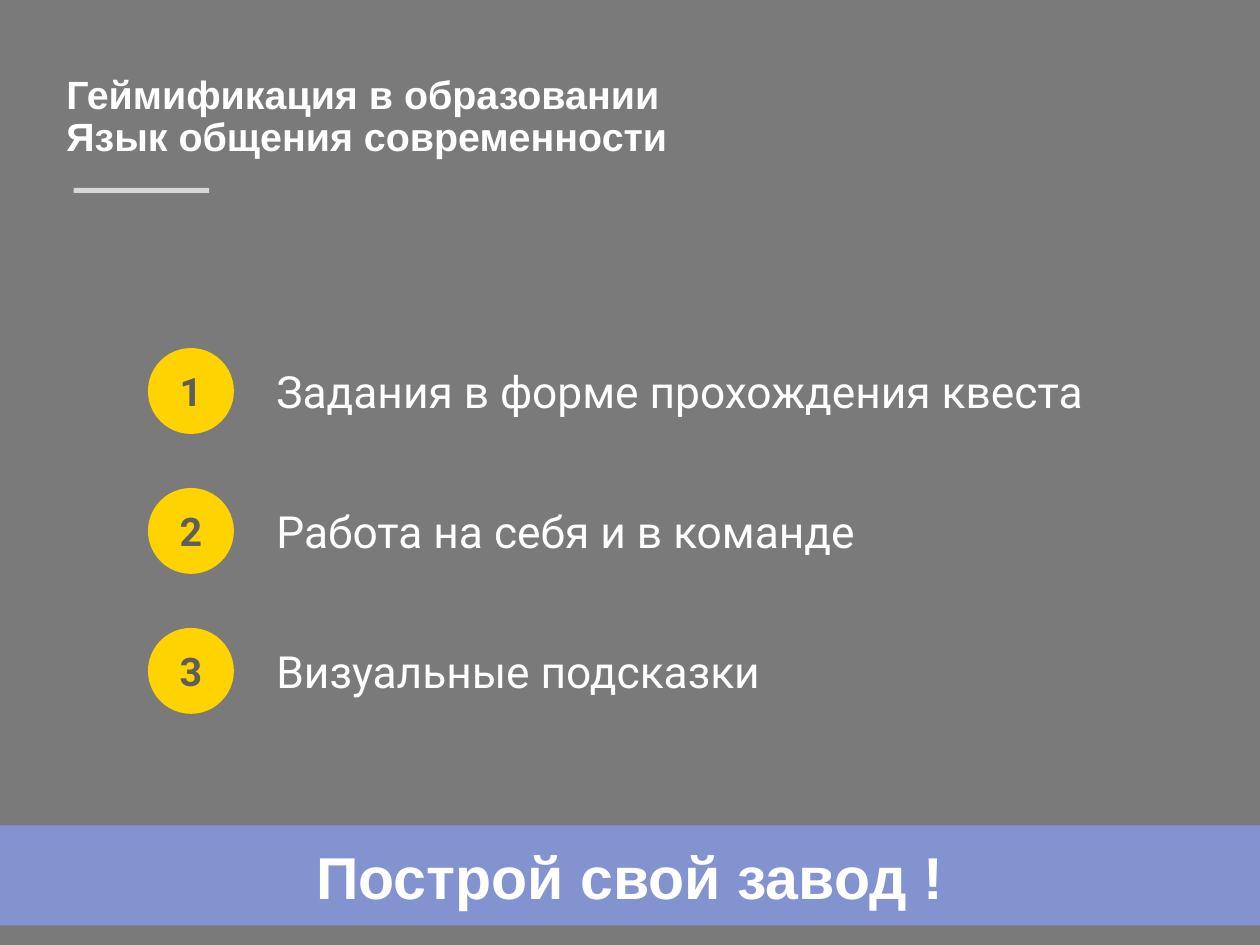
from lxml.etree import SubElement
from pptx import Presentation
from pptx.dml.color import RGBColor
from pptx.enum.shapes import MSO_CONNECTOR, MSO_SHAPE
from pptx.enum.text import MSO_ANCHOR, MSO_AUTO_SIZE, PP_ALIGN
from pptx.oxml.ns import qn
from pptx.util import Inches, Pt

COLORS = {
    "veil": "424242",
    "band": "8393CF",
    "white": "FFFFFF",
    "disc": "FFD300",
    "digit": "5E5E5E",
}


def add_block(kind, left, top, width, height, color):
    block = slide.shapes.add_shape(
        kind, Inches(left), Inches(top), Inches(width), Inches(height))
    block.shadow.inherit = False
    block.fill.solid()
    block.fill.fore_color.rgb = RGBColor.from_string(COLORS[color])
    block.line.fill.background()
    return block


def write(shape, text, size, font, color, bold=False,
          align=PP_ALIGN.LEFT, anchor=MSO_ANCHOR.MIDDLE):
    frame = shape.text_frame
    frame.word_wrap = True
    frame.auto_size = MSO_AUTO_SIZE.NONE
    frame.vertical_anchor = anchor
    frame.margin_left = frame.margin_right = Inches(0.06)
    frame.margin_top = frame.margin_bottom = Inches(0.06)
    para = frame.paragraphs[0]
    para.text = text
    para.alignment = align
    for run in para.runs:
        run.font.size = Pt(size)
        run.font.name = font
        run.font.bold = bold
        run.font.color.rgb = RGBColor.from_string(COLORS[color])
    return para


deck = Presentation()
deck.slide_width = Inches(14.22)
deck.slide_height = Inches(10.67)
slide = deck.slides.add_slide(deck.slide_layouts[5])

# Translucent grey backdrop
veil = add_block(MSO_SHAPE.RECTANGLE, 0, 0, 14.22, 10.67, "veil")
tint = veil.fill._xPr.find(".//" + qn("a:srgbClr"))
SubElement(tint, qn("a:alpha"), val="70000")

# Slogan band
band = add_block(MSO_SHAPE.RECTANGLE, 0, 9.32, 14.22, 1.13, "band")
write(band, "Построй свой завод !", 48, "Arial", "white", True, PP_ALIGN.CENTER)

# Title, moved in front of the backdrop
title = slide.shapes.title
title.left, title.top = Inches(0.69), Inches(0.76)
title.width, title.height = Inches(9.72), Inches(1.11)
head = write(title, "Геймификация в образовании\nЯзык общения современности",
             32, "Arial", "white", True, anchor=MSO_ANCHOR.BOTTOM)
head.line_spacing = 0.9
SubElement(head._p.find(qn("a:br")), qn("a:rPr"), sz="3200")
band._element.addnext(title._element)

# Rule under the title
rule = slide.shapes.add_connector(
    MSO_CONNECTOR.STRAIGHT, Inches(0.83), Inches(2.15), Inches(2.36), Inches(2.15))
rule.line.width = Pt(4)
rule.line.color.rgb = RGBColor.from_string(COLORS["white"])
tint = rule.line._ln.find(".//" + qn("a:srgbClr"))
SubElement(tint, qn("a:alpha"), val="70000")
SubElement(rule._element.spPr, qn("a:effectLst"))

# Numbered points
points = [
    "Задания в форме прохождения квеста",
    "Работа на себя и в команде",
    "Визуальные подсказки",
]
for num, point in enumerate(points):
    top = 3.93 + num * 1.58
    disc = add_block(MSO_SHAPE.OVAL, 1.67, top, 0.97, 0.97, "disc")
    write(disc, str(num + 1), 32, "Roboto", "digit", True, PP_ALIGN.CENTER)
    label = slide.shapes.add_textbox(
        Inches(3.06), Inches(top - 0.11), Inches(11.16), Inches(1.18))
    write(label, point, 36, "Roboto", "white")

deck.save("out.pptx")
